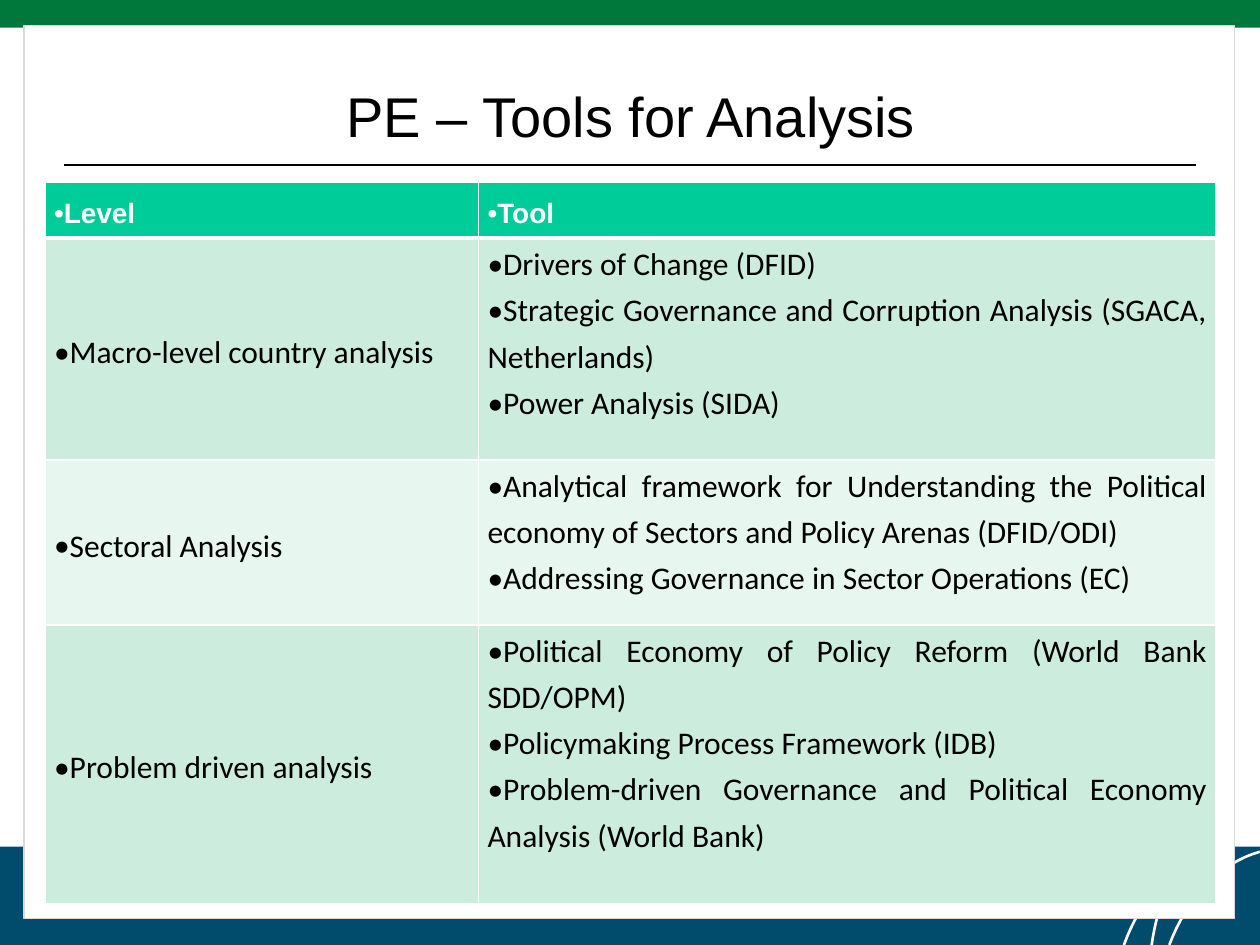
from lxml import etree
from pptx import Presentation
from pptx import util as u
from pptx.dml.color import RGBColor
from pptx.enum import shapes, text
from pptx.oxml.ns import qn

TITLE = "PE – Tools for Analysis"
HEADER = ("Level", "Tool")
ROWS = [
    ("Macro-level country analysis", [
        "Drivers of Change (DFID)",
        "Strategic Governance and Corruption Analysis (SGACA, Netherlands)",
        "Power Analysis (SIDA)"]),
    ("Sectoral Analysis", [
        "Analytical framework for Understanding the Political economy of "
        "Sectors and Policy Arenas (DFID/ODI)",
        "Addressing Governance in Sector Operations (EC)"]),
    ("Problem driven analysis", [
        "Political Economy of Policy Reform (World Bank SDD/OPM)",
        "Policymaking Process Framework (IDB)",
        "Problem-driven Governance and Political Economy Analysis (World Bank)"]),
]
COLUMN_WIDTHS = (3.44, 5.85)
ROW_HEIGHTS = (0.44, 1.76, 1.31, 2.21)
BAND_FILLS = ("CCECDE", "E7F6EF")
# Corner arcs: start, two control points, end
ARCS = [
    [(9.6, 6.71), (9.3, 6.85), (9.05, 7.14), (8.92, 7.5)],
    [(10, 6.76), (9.68, 6.85), (9.42, 7.13), (9.28, 7.5)],
    [(9.43, 6.71), (9.29, 6.93), (9.18, 7.21), (9.14, 7.5)],
]
ARC_STEPS = 16


def color(value):
    return RGBColor.from_string(value)


def set_line(line, value, width):
    line.color.rgb = color(value)
    line.width = u.Pt(width)


def add_panel(slide, left, top, width, height, fill, outline=None):
    shape = slide.shapes.add_shape(
        shapes.MSO_SHAPE.RECTANGLE, *map(u.Inches, (left, top, width, height)))
    shape.shadow.inherit = False
    shape.fill.solid()
    shape.fill.fore_color.rgb = color(fill)
    if outline:
        set_line(shape.line, outline, 0.75)
    else:
        shape.line.fill.background()


def add_arc(slide, points):
    curve = []
    for step in range(ARC_STEPS + 1):
        t = step / ARC_STEPS
        weights = ((1 - t) ** 3, 3 * t * (1 - t) ** 2, 3 * t * t * (1 - t), t ** 3)
        curve.append(tuple(u.Inches(sum(w * p[axis] for w, p in zip(weights, points)))
                           for axis in (0, 1)))
    builder = slide.shapes.build_freeform(*curve[0])
    builder.add_line_segments(curve[1:], close=False)
    shape = builder.convert_to_shape()
    shape.shadow.inherit = False
    shape.fill.background()
    set_line(shape.line, "FFFFFF", 1.5)


def set_font(paragraph, name, size, value, bold=False):
    for run in paragraph.runs:
        run.font.name = name
        run.font.size = u.Pt(size)
        run.font.bold = bold
        run.font.color.rgb = color(value)


def set_borders(cell, top=1, bottom=1):
    properties = cell._tc.get_or_add_tcPr()
    sides = (("lnL", 1), ("lnR", 1), ("lnT", top), ("lnB", bottom))
    for index, (side, width) in enumerate(sides):
        line = etree.Element(qn("a:" + side), w=str(u.Pt(width)))
        fill = etree.SubElement(line, qn("a:solidFill"))
        etree.SubElement(fill, qn("a:srgbClr"), val="FFFFFF")
        properties.insert(index, line)


def add_bullet(paragraph, font_name):
    properties = paragraph._p.get_or_add_pPr()
    properties.set("marL", "0")
    properties.set("indent", "0")
    etree.SubElement(properties, qn("a:buFont"), typeface=font_name)
    etree.SubElement(properties, qn("a:buChar"), char="•")


def fill_cell(cell, lines, fill, font, spacing, alignment, anchor):
    cell.fill.solid()
    cell.fill.fore_color.rgb = color(fill)
    cell.margin_left = cell.margin_right = u.Inches(0.07)
    cell.margin_top = cell.margin_bottom = 0
    cell.vertical_anchor = anchor
    cell.text_frame.text = "\n".join(lines)
    for paragraph in cell.text_frame.paragraphs:
        paragraph.alignment = alignment
        paragraph.line_spacing = spacing
        add_bullet(paragraph, font[0])
        set_font(paragraph, *font)


def add_tools_table(slide):
    frame = slide.shapes.add_table(
        len(ROWS) + 1, len(HEADER), u.Inches(0.36), u.Inches(1.45),
        u.Inches(sum(COLUMN_WIDTHS)), u.Inches(sum(ROW_HEIGHTS)))
    table = frame.table
    for column, width in zip(table.columns, COLUMN_WIDTHS):
        column.width = u.Inches(width)
    for row, height in zip(table.rows, ROW_HEIGHTS):
        row.height = u.Inches(height)

    left, justify = text.PP_ALIGN.LEFT, text.PP_ALIGN.JUSTIFY
    top, middle = text.MSO_ANCHOR.TOP, text.MSO_ANCHOR.MIDDLE
    for index, label in enumerate(HEADER):
        cell = table.cell(0, index)
        fill_cell(cell, [label], "00CC99", ("Arial", 16, "FFFFFF", True), 1.5, justify, top)
        set_borders(cell, bottom=3)

    body_font = ("Calibri", 18, "000000")
    for index, (level, tools) in enumerate(ROWS):
        fill = BAND_FILLS[index % 2]
        level_cell, tool_cell = table.rows[index + 1].cells
        fill_cell(level_cell, [level], fill, body_font, 1.2, left, middle)
        fill_cell(tool_cell, tools, fill, body_font, 1.2, justify, top)
        for cell in (level_cell, tool_cell):
            set_borders(cell, top=1 if index else 3)


def main():
    presentation = Presentation()
    presentation.slide_width, presentation.slide_height = u.Inches(10), u.Inches(7.5)
    slide = presentation.slides.add_slide(presentation.slide_layouts[6])

    # Background bands, arcs and white panel
    add_panel(slide, 0, 6.72, 10, 0.78, "014C6D")
    add_panel(slide, 0, 0, 10, 0.22, "00783C")
    for points in ARCS:
        add_arc(slide, points)
    add_panel(slide, 0.19, 0.2, 9.61, 7.09, "FFFFFF", "D9D9D9")

    # Title and rule
    rule = slide.shapes.add_connector(
        shapes.MSO_CONNECTOR.STRAIGHT, *map(u.Inches, (0.51, 1.31, 9.49, 1.31)))
    set_line(rule.line, "000000", 1.25)
    etree.SubElement(rule._element.spPr, qn("a:effectLst"))
    title = slide.shapes.add_textbox(*map(u.Inches, (1.29, 0.58, 7.44, 0.66)))
    title.text_frame.word_wrap = True
    title.text_frame.vertical_anchor = text.MSO_ANCHOR.MIDDLE
    title.text_frame.text = TITLE
    paragraph = title.text_frame.paragraphs[0]
    paragraph.alignment = text.PP_ALIGN.CENTER
    set_font(paragraph, "Arial", 32, "000000")

    add_tools_table(slide)
    presentation.save("out.pptx")


if __name__ == "__main__":
    main()
